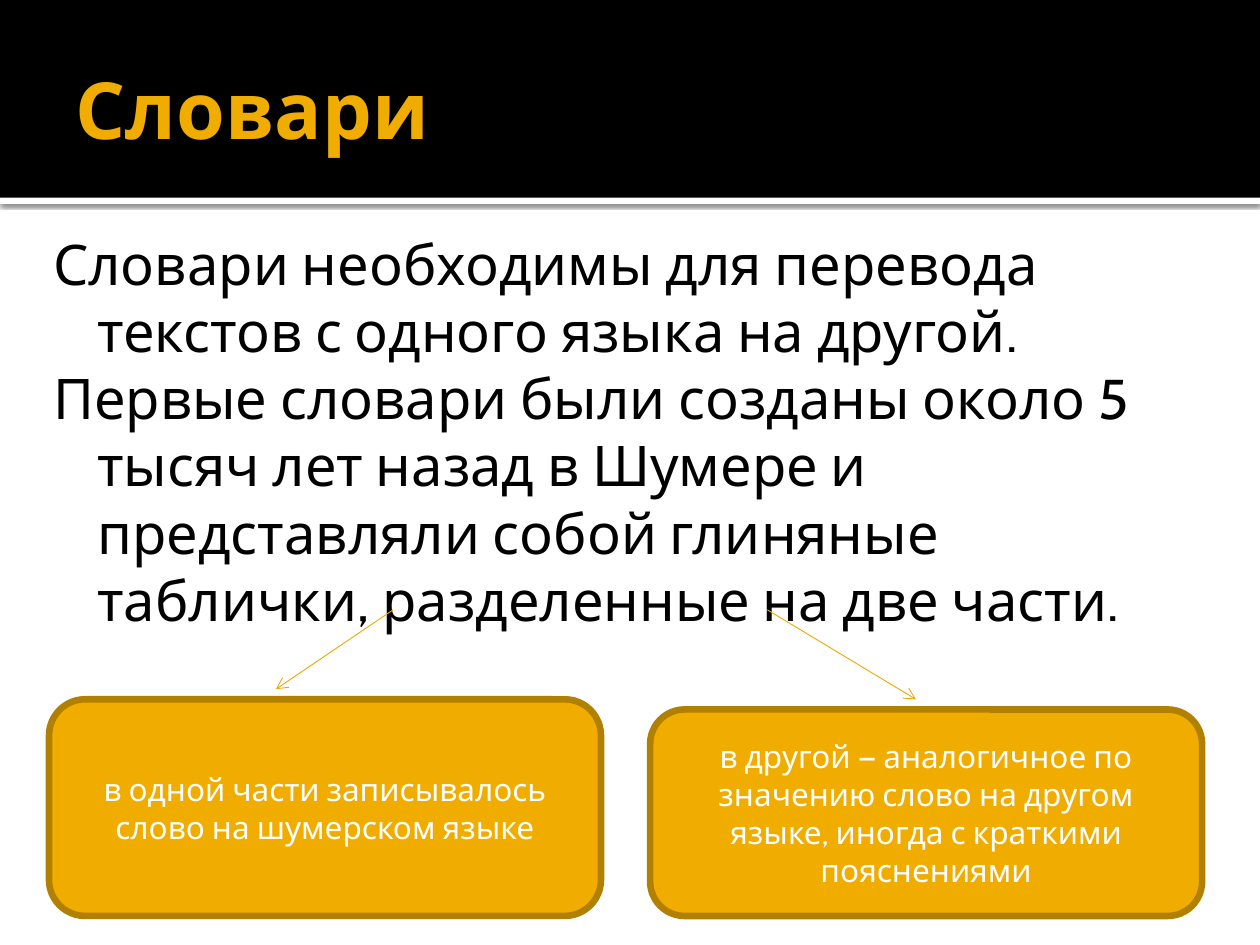
"""Build a slide on dictionaries: title, two paragraphs and two linked boxes."""
from lxml.etree import SubElement
from pptx import Presentation
from pptx.dml.color import RGBColor
from pptx.enum.shapes import MSO_CONNECTOR as CONN, MSO_SHAPE as SHAPE
from pptx.enum.text import MSO_ANCHOR as ANCHOR, MSO_AUTO_SIZE as AUTO, PP_ALIGN as ALIGN
from pptx.oxml.ns import qn
from pptx.util import Pt

FONT = "Cabin"
COLORS = {
    "white": "FFFFFF",
    "black": "000000",
    "amber": "F0AD00",
    "border": "B28000",
    "arrow": "EBA900",
}
BODY = [
    "Словари необходимы для перевода текстов с одного языка на другой.",
    "Первые словари были созданы около 5 тысяч лет назад в Шумере и "
    "представляли собой глиняные таблички, разделенные на две части.",
]
BOXES = [
    (28, 399.6, 315.4, 123.8, "в одной части записывалось слово на шумерском языке"),
    (371.5, 405.4, 315.4, 118, "в другой — аналогичное по значению слово на другом "
     "языке, иногда с краткими пояснениями"),
]
ARROWS = [(224.6, 348.5, 157.7, 393.8), (438.5, 348.5, 523.4, 399.6)]


def rgb(name):
    return RGBColor.from_string(COLORS[name])


def style_text(tf, size, color, bold=False, align=ALIGN.LEFT):
    tf.word_wrap = True
    tf.auto_size = AUTO.NONE
    for p in tf.paragraphs:
        p.alignment = align
        for r in p.runs:
            r.font.name = FONT
            r.font.size = Pt(size)
            r.font.bold = bold
            r.font.color.rgb = rgb(color)


def place(sp, left, top, width, height):
    sp.left, sp.top, sp.width, sp.height = map(Pt, (left, top, width, height))


def set_insets(tf, left, top, right, bottom):
    tf.margin_left, tf.margin_top = Pt(left), Pt(top)
    tf.margin_right, tf.margin_bottom = Pt(right), Pt(bottom)


def add_block(s, kind, left, top, width, height, fill):
    sp = s.shapes.add_shape(kind, *map(Pt, (left, top, width, height)))
    sp.shadow.inherit = False
    sp.fill.solid()
    sp.fill.fore_color.rgb = rgb(fill)
    sp.line.fill.background()
    return sp


def add_band(s, top, height, fill, level):
    sp = add_block(s, SHAPE.RECTANGLE, 0, top, 720, height, fill)
    s.shapes._spTree.insert(2 + level, sp._element)
    return sp


def add_shadow(sp):
    effects = sp._element.spPr.find(qn("a:effectLst"))
    shadow = SubElement(effects, qn("a:outerShdw"), blurRad=str(Pt(2.5)),
                        dist=str(Pt(0.8)), dir="5400000", rotWithShape="0")
    color = SubElement(shadow, qn("a:srgbClr"), val=COLORS["black"])
    SubElement(color, qn("a:alpha"), val="60000")


def fill_title(sp):
    place(sp, 36, 12.2, 648, 98.6)
    tf = sp.text_frame
    tf.text = "Словари"
    tf.vertical_anchor = ANCHOR.MIDDLE
    set_insets(tf, 7.2, 3.6, 3.6, 3.6)
    style_text(tf, 45, "amber", bold=True)


def fill_body(sp):
    place(sp, 16.6, 123.8, 686.2, 364.3)
    tf = sp.text_frame
    tf.text = "\n".join(BODY)
    set_insets(tf, 4.3, 7.2, 7.2, 3.6)
    style_text(tf, 32, "black")
    for p in tf.paragraphs:
        p.space_before = Pt(0)
        pPr = p._p.get_or_add_pPr()
        pPr.set("marL", str(Pt(34.6)))
        pPr.set("indent", str(Pt(-25.2)))
        SubElement(pPr, qn("a:buNone"))


def add_arrow(s, x1, y1, x2, y2):
    line = s.shapes.add_connector(CONN.STRAIGHT, *map(Pt, (x1, y1, x2, y2)))
    line.line.color.rgb = rgb("arrow")
    line.line.width = Pt(0.5)
    SubElement(line.line._get_or_add_ln(), qn("a:tailEnd"), type="arrow")
    SubElement(line._element.spPr, qn("a:effectLst"))


def add_box(s, left, top, width, height, text):
    sp = add_block(s, SHAPE.ROUNDED_RECTANGLE, left, top, width, height, "amber")
    sp.line.color.rgb = rgb("border")
    sp.line.width = Pt(3.78)
    tf = sp.text_frame
    tf.text = text
    tf.vertical_anchor = ANCHOR.MIDDLE
    style_text(tf, 18, "white", align=ALIGN.CENTER)


def main():
    prs = Presentation()
    prs.slide_width, prs.slide_height = Pt(720), Pt(540)
    s = prs.slides.add_slide(prs.slide_layouts[1])
    add_shadow(add_band(s, 113, 3.6, "white", 0))
    add_band(s, 0, 113, "black", 1)
    fill_title(s.shapes.title)
    fill_body(s.placeholders[1])
    for arrow in ARROWS:
        add_arrow(s, *arrow)
    for box in BOXES:
        add_box(s, *box)
    prs.save("out.pptx")


if __name__ == "__main__":
    main()
